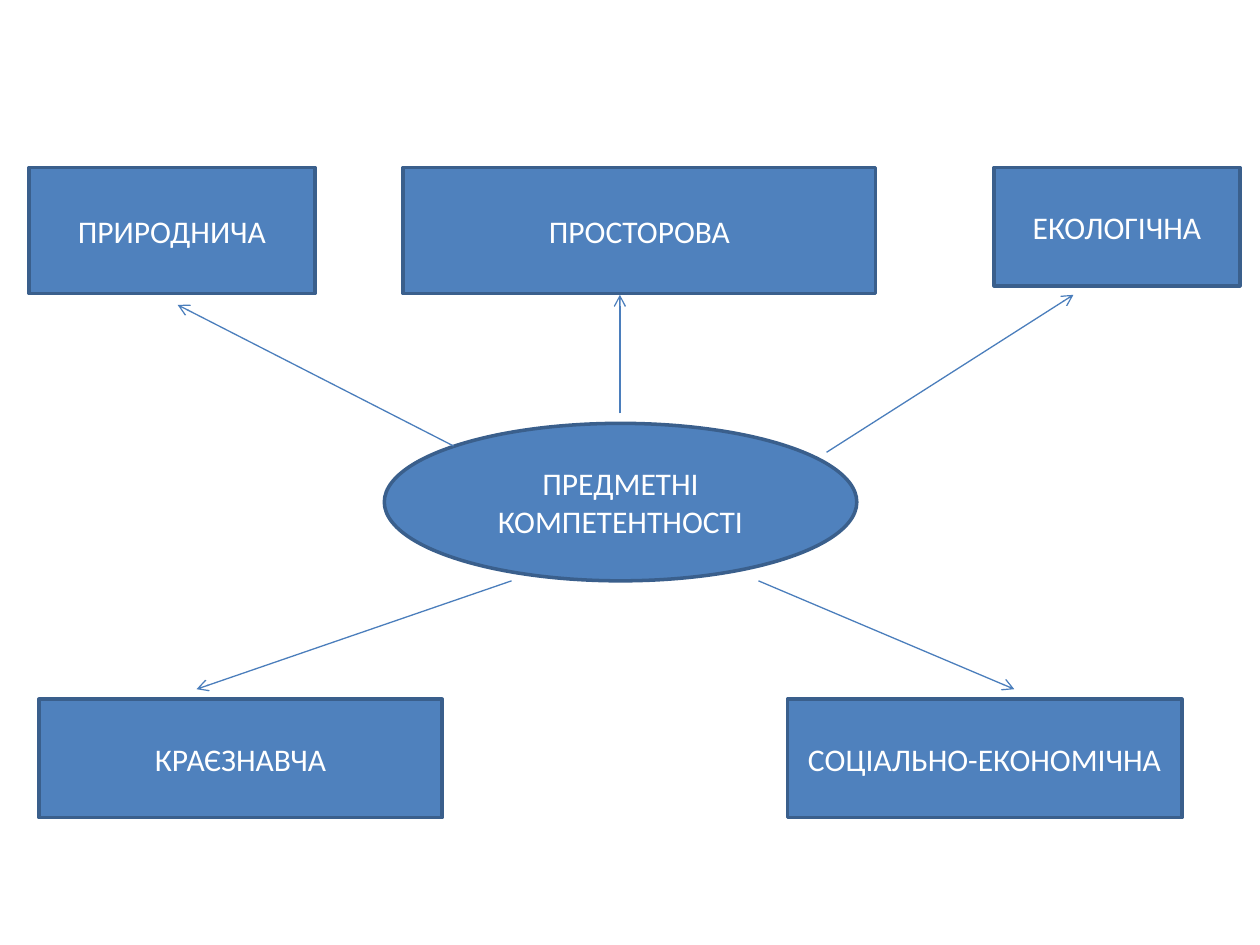
from lxml import etree
from pptx import Presentation
from pptx.dml.color import RGBColor
from pptx.enum.shapes import MSO_CONNECTOR, MSO_SHAPE
from pptx.enum.text import MSO_ANCHOR, PP_ALIGN
from pptx.oxml.ns import qn
from pptx.util import Inches, Pt

ELLIPSE = MSO_SHAPE.OVAL
RECTANGLE = MSO_SHAPE.RECTANGLE
STRAIGHT = MSO_CONNECTOR.STRAIGHT
MIDDLE = MSO_ANCHOR.MIDDLE
CENTER = PP_ALIGN.CENTER

BLUE = RGBColor(0x4F, 0x81, 0xBD)
DARK_BLUE = RGBColor(0x3A, 0x5F, 0x8C)
ARROW_BLUE = RGBColor(0x4B, 0x7E, 0xBC)
WHITE = RGBColor(0xFF, 0xFF, 0xFF)

TOP_ROW = 1.33
BOTTOM_ROW = 5.55
COMPETENCES = [
    ("ПРИРОДНИЧА", 0.23, TOP_ROW, 2.27, 1),
    ("ПРОСТОРОВА", 3.2, TOP_ROW, 3.75, 1),
    ("ЕКОЛОГІЧНА", 7.89, TOP_ROW, 1.95, 0.94),
    ("КРАЄЗНАВЧА", 0.31, BOTTOM_ROW, 3.2, 0.94),
    ("СОЦІАЛЬНО-ЕКОНОМІЧНА", 6.25, BOTTOM_ROW, 3.13, 0.94),
]
ARROWS = [
    (3.6, 3.54, 1.41, 2.42),
    (4.92, 3.28, 4.92, 2.34),
    (6.56, 3.59, 8.52, 2.34),
    (4.06, 4.61, 1.56, 5.47),
    (6.02, 4.61, 8.05, 5.47),
]


class DiagramBuilder:
    """Draws diagram elements on the current slide in one shared style."""

    font_format = {"name": "Calibri", "size": Pt(18)}
    frame_format = {"word_wrap": True, "vertical_anchor": MIDDLE}

    def __init__(self, slide):
        self.slide = slide

    def set_format(self, target, values):
        for name, value in values.items():
            setattr(target, name, value)

    def add_node(self, kind, text, *box):
        shape = self.slide.shapes.add_shape(kind, *map(Inches, box))
        shape.shadow.inherit = False
        shape.fill.solid()
        shape.fill.fore_color.rgb = BLUE
        shape.line.color.rgb = DARK_BLUE
        shape.line.width = Pt(2)
        self.set_format(shape.text_frame, self.frame_format)
        paragraph = shape.text_frame.paragraphs[0]
        paragraph.alignment = CENTER
        run = paragraph.add_run()
        run.text = text
        self.set_format(run.font, self.font_format)
        run.font.color.rgb = WHITE

    def add_arrow(self, *ends):
        connector = self.slide.shapes.add_connector(STRAIGHT, *map(Inches, ends))
        connector.line.color.rgb = ARROW_BLUE
        connector.line.width = Pt(0.75)
        properties = connector._element.spPr
        etree.SubElement(properties.find(qn("a:ln")), qn("a:tailEnd"), type="arrow")
        etree.SubElement(properties, qn("a:effectLst"))


def main():
    presentation = Presentation()
    presentation.slide_width = Inches(10)
    presentation.slide_height = Inches(7.5)
    builder = DiagramBuilder(presentation.slides.add_slide(presentation.slide_layouts[6]))
    builder.add_node(ELLIPSE, "ПРЕДМЕТНІ КОМПЕТЕНТНОСТІ", 3.05, 3.36, 3.75, 1.25)
    for competence in COMPETENCES:
        builder.add_node(RECTANGLE, *competence)
    for arrow in ARROWS:
        builder.add_arrow(*arrow)
    presentation.save("out.pptx")


if __name__ == "__main__":
    main()
